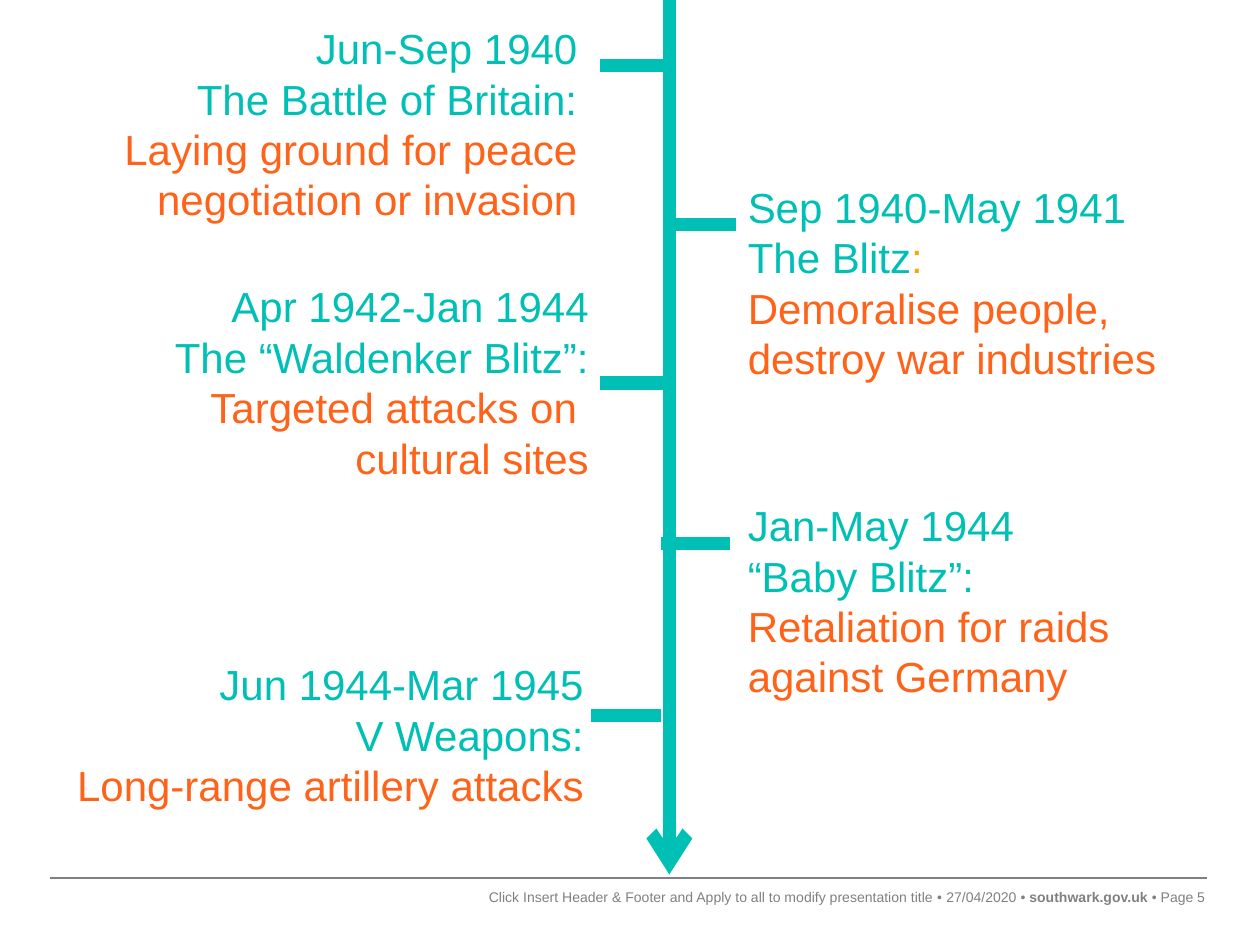
import pptx
import pptx.util
import pptx.dml.color
import pptx.enum.shapes
import pptx.enum.text
import pptx.oxml
import lxml.etree

Pt = pptx.util.Pt
ALIGN = pptx.enum.text.PP_ALIGN
ANCHOR = pptx.enum.text.MSO_ANCHOR
TEAL, ORANGE, AMBER, GREY = "00C0B5", "FF6319", "F0AB00", "808080"


def rgb(value):
    return pptx.dml.color.RGBColor.from_string(value)


class Timeline:
    font = "Arial"
    axis_x = 382.5

    def __init__(self, prs):
        self.s = prs.slides.add_slide(prs.slide_layouts[6])

    def line(self, x1, y1, x2, y2, color=TEAL, width=7.5, arrow=False):
        c = self.s.shapes.add_connector(
            pptx.enum.shapes.MSO_CONNECTOR.STRAIGHT, Pt(x1), Pt(y1), Pt(x2), Pt(y2))
        c.line.color.rgb = rgb(color)
        c.line.width = Pt(width)
        if arrow:
            ln = c.line._get_or_add_ln()
            lxml.etree.SubElement(ln, pptx.oxml.ns.qn("a:tailEnd"), type="arrow")
        lxml.etree.SubElement(c._element.spPr, pptx.oxml.ns.qn("a:effectLst"))

    def box(self, x, y, w, h):
        tf = self.s.shapes.add_textbox(Pt(x), Pt(y), Pt(w), Pt(h)).text_frame
        tf.word_wrap = True
        return tf

    def style(self, p, size, color, align):
        p.font.name, p.font.size = self.font, Pt(size)
        p.font.color.rgb = rgb(color)
        p.alignment = align

    def event(self, x, y, w, h, date, name, aim, align):
        """Date and name in teal, aim in orange; returns the name paragraph."""
        tf = self.box(x, y, w, h)
        tf.text = "\n".join((date, name, aim))
        for p, color in zip(tf.paragraphs, (TEAL, TEAL, ORANGE)):
            self.style(p, 24, color, align)
        return tf.paragraphs[1]

    def footer(self, x, w, *texts, align=ALIGN.LEFT, wrap=True, anchor=ANCHOR.TOP):
        """One grey footer item; every second text is bold."""
        tf = self.box(x, 508, w, 9.4)
        tf.word_wrap = wrap
        tf.vertical_anchor = anchor
        tf.margin_left = tf.margin_right = tf.margin_top = tf.margin_bottom = 0
        p = tf.paragraphs[0]
        self.style(p, 8, GREY, align)
        for i, text in enumerate(texts):
            r = p.add_run()
            r.text = text
            r.font.bold = i % 2 == 1


def main():
    prs = pptx.Presentation()
    prs.slide_width, prs.slide_height = Pt(720), Pt(540)
    t = Timeline(prs)

    # Footer
    t.line(28.3, 501.8, 689.8, 501.8, GREY, 1)
    t.footer(583.2, 100, "• ", "southwark.gov.uk", " • Page", wrap=False)
    t.footer(535.5, 2.9, "•", wrap=False)
    t.footer(537.8, 43.2, "27/04/2020", align=ALIGN.RIGHT, anchor=ANCHOR.MIDDLE)
    t.footer(41.8, 491.8,
             "Click Insert Header & Footer and Apply to all to modify presentation title",
             align=ALIGN.RIGHT, anchor=ANCHOR.MIDDLE)
    t.footer(666, 22.6, "5", align=ALIGN.RIGHT)

    # Time axis and its ticks
    t.line(t.axis_x, 0, t.axis_x, 499.7, arrow=True)
    for x1, x2, y in ((342.7, t.axis_x, 37.4), (380.2, 420.3, 128.2),
                      (342.7, t.axis_x, 218.9), (377.5, 417.3, 310.4),
                      (337.7, 377.5, 408.7)):
        t.line(x1, y, x2, y)

    # Events left of the axis
    for x, y, h, *texts in (
            (25.2, 9.4, 123.8, "Jun-Sep 1940", "The Battle of Britain:",
             "Laying ground for peace negotiation or invasion"),
            (31.7, 157, 123.8, "Apr 1942-Jan 1944", "The “Waldenker Blitz”:",
             "Targeted attacks on \vcultural sites"),
            (28.8, 373, 94.3, "Jun 1944-Mar 1945", "V Weapons:",
             "Long-range artillery attacks")):
        t.event(x, y, 311.8, h, *texts, ALIGN.RIGHT)

    # Events right of the axis
    blitz = t.event(420.2, 100.1, 267.8, 152.6, "Sep 1940-May 1941", "The Blitz",
                    "Demoralise people, destroy war industries", ALIGN.LEFT)
    r = blitz.add_run()
    r.text = ":"
    r.font.color.rgb = rgb(AMBER)
    t.event(420.2, 282, 267.8, 123.8, "Jan-May 1944", "“Baby Blitz”:",
            "Retaliation for raids against Germany", ALIGN.LEFT)

    prs.save("out.pptx")


if __name__ == "__main__":
    main()
